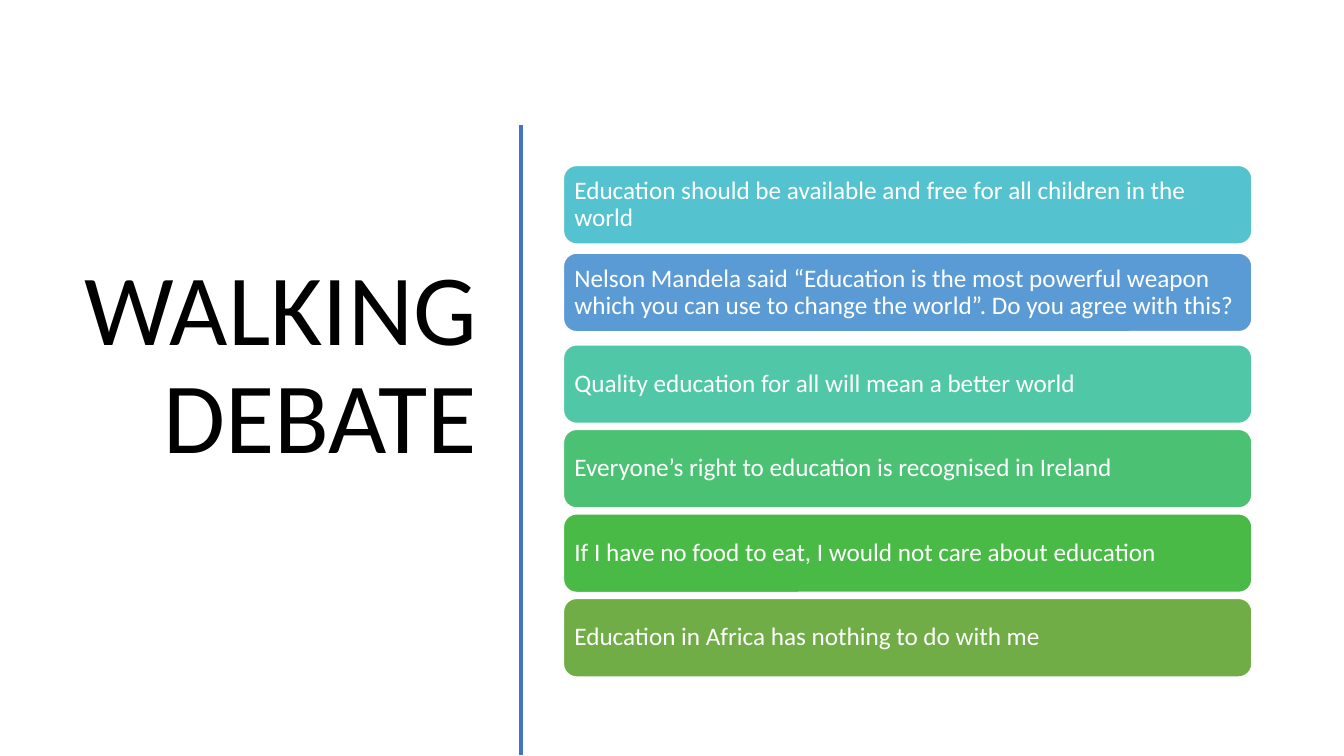
from lxml.etree import SubElement
from pptx import Presentation
from pptx.dml.color import RGBColor
from pptx.enum.shapes import MSO_CONNECTOR as Connector, MSO_SHAPE as Preset
from pptx.enum.text import MSO_ANCHOR as Anchor, MSO_AUTO_SIZE as AutoSize, PP_ALIGN as Align
from pptx.oxml.ns import qn
from pptx.util import Cm, Pt

FONT = "Calibri"
CARD_LEFT, CARD_WIDTH, CARD_HEIGHT = 14.2, 17.35, 1.98

# Statement, fill colour and top in centimetres
STATEMENTS = [
    ("Education should be available and free for all children in the world", "55C3CF", 4.17),
    ("Nelson Mandela said “Education is the most powerful weapon which you can "
     "use to change the world”. Do you agree with this?", "5B9BD5", 6.38),
    ("Quality education for all will mean a better world", "50C8A7", 8.69),
    ("Everyone’s right to education is recognised in Ireland", "4BC174", 10.82),
    ("If I have no food to eat, I would not care about education", "4ABA46", 12.95),
    ("Education in Africa has nothing to do with me", "70AD47", 15.08),
]


def colour(value):
    return RGBColor.from_string(value)


def write_text(box, text, size=18, ink="FFFFFF", align=Align.LEFT, inset=0.18, bottom=0.18):
    frame = box.text_frame
    frame.word_wrap = True
    frame.auto_size = AutoSize.NONE
    frame.vertical_anchor = Anchor.MIDDLE
    frame.margin_left = frame.margin_right = Cm(inset)
    frame.margin_top, frame.margin_bottom = Cm(0.18), Cm(bottom)
    para = frame.paragraphs[0]
    para.alignment = align
    para.line_spacing = 0.9
    para.space_before = Pt(0)
    span = para.add_run()
    span.text = text
    span.font.name = FONT
    span.font.size = Pt(size)
    span.font.color.rgb = colour(ink)


def place_title(page, text):
    title = page.shapes.title
    title.left, title.top, title.width, title.height = Cm(1.32), Cm(2.97), Cm(10.95), Cm(15.52)
    # The deep bottom inset lifts the title above the middle of its box
    write_text(title, text, size=72, ink="000000", align=Align.RIGHT, inset=0.25, bottom=3.15)


def add_divider(page, x, top, bottom):
    line = page.shapes.add_connector(Connector.STRAIGHT, Cm(x), Cm(top), Cm(x), Cm(bottom))
    line.line.color.rgb = colour("4472C4")
    line.line.width = Pt(2.25)
    SubElement(line._element.spPr, qn("a:effectLst"))


def add_card(page, text, fill, top):
    card = page.shapes.add_shape(
        Preset.ROUNDED_RECTANGLE, Cm(CARD_LEFT), Cm(top), Cm(CARD_WIDTH), Cm(CARD_HEIGHT))
    card.shadow.inherit = False
    card.fill.solid()
    card.fill.fore_color.rgb = colour(fill)
    card.line.color.rgb = colour("FFFFFF")
    card.line.width = Pt(1)
    write_text(card, text)


def main():
    deck = Presentation()
    deck.slide_width, deck.slide_height = Cm(33.87), Cm(19.05)
    page = deck.slides.add_slide(deck.slide_layouts[5])

    # Title on the left, divider beside it
    place_title(page, "WALKING DEBATE")
    add_divider(page, 13.13, 3.15, 19.02)

    # Statements to debate
    for text, fill, top in STATEMENTS:
        add_card(page, text, fill, top)

    deck.save("out.pptx")


if __name__ == "__main__":
    main()
